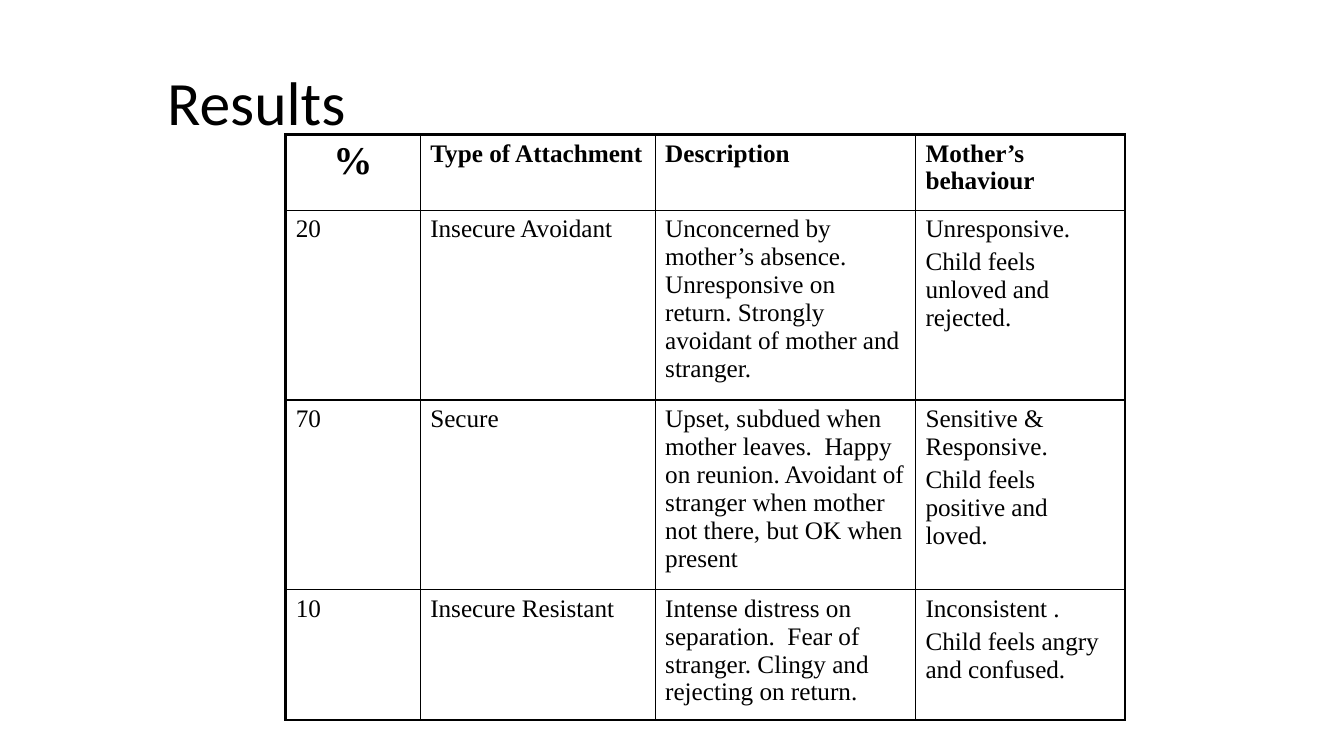
from dataclasses import dataclass

from lxml import etree
from pptx import Presentation
from pptx.dml.color import RGBColor
from pptx.enum.text import MSO_ANCHOR, MSO_AUTO_SIZE, PP_ALIGN
from pptx.oxml.ns import qn
from pptx.table import Table, _Cell
from pptx.text.text import TextFrame
from pptx.util import Cm, Pt

LEFT, CENTER = PP_ALIGN.LEFT, PP_ALIGN.CENTER
TOP, MIDDLE = MSO_ANCHOR.TOP, MSO_ANCHOR.MIDDLE
NO_AUTOFIT = MSO_AUTO_SIZE.NONE


@dataclass(frozen=True)
class Theme:
    ink: str = "000000"
    title_font: str = "Calibri"
    table_font: str = "Times New Roman"
    title_size: float = 44
    percent_size: float = 28
    body_size: float = 18
    outer_line: float = 2.25
    inner_line: float = 1


@dataclass(frozen=True)
class Finding:
    percent: str
    attachment: str
    description: str
    mother: str


THEME = Theme()
COLUMN_WIDTHS = (3.39, 5.92, 6.56, 5.28)
ROW_HEIGHTS = (1.91, 4.78, 4.78, 3.28)
FINDINGS = (
    Finding("%", "Type of Attachment", "Description", "Mother’s behaviour"),
    Finding("20", "Insecure Avoidant",
            "Unconcerned by mother’s absence. Unresponsive on return. "
            "Strongly avoidant of mother and stranger.",
            "Unresponsive.\nChild feels unloved and rejected."),
    Finding("70", "Secure",
            "Upset, subdued when mother leaves.  Happy on reunion. Avoidant of "
            "stranger when mother not there, but OK when present",
            "Sensitive & Responsive.\nChild feels positive and loved."),
    Finding("10", "Insecure Resistant",
            "Intense distress on separation.  Fear of stranger. "
            "Clingy and rejecting on return.",
            "Inconsistent .\nChild feels angry and confused."),
)


def write_text(frame: TextFrame, text: str, *, font: str, size: float,
               bold: bool = False, align: PP_ALIGN = LEFT,
               line_spacing: float | None = None,
               percent_before: int | None = None) -> None:
    """Fill a frame, one paragraph per line of text."""
    frame.text = text
    for paragraph in frame.paragraphs:
        paragraph.alignment = align
        paragraph.line_spacing = line_spacing
        if percent_before is not None:
            properties = paragraph._p.get_or_add_pPr()
            before = etree.SubElement(properties, qn("a:spcBef"))
            etree.SubElement(before, qn("a:spcPct"), val=str(percent_before * 1000))
        for run in paragraph.runs:
            run.font.name = font
            run.font.size = Pt(size)
            run.font.bold = bold
            run.font.color.rgb = RGBColor.from_string(THEME.ink)


def draw_borders(cell: _Cell, outer_sides: dict[str, bool]) -> None:
    """Draw four borders, heavier where the side is on the table's edge."""
    properties = cell._tc.get_or_add_tcPr()
    for position, (side, is_outer) in enumerate(outer_sides.items()):
        width = THEME.outer_line if is_outer else THEME.inner_line
        line = etree.Element(qn(f"a:ln{side}"), w=str(int(Pt(width))))
        fill = etree.SubElement(line, qn("a:solidFill"))
        etree.SubElement(fill, qn("a:srgbClr"), val=THEME.ink)
        properties.insert(position, line)


def fill_table(table: Table) -> None:
    table.first_row = table.horz_banding = False
    for column, width in zip(table.columns, COLUMN_WIDTHS):
        column.width = Cm(width)
    for row, height in zip(table.rows, ROW_HEIGHTS):
        row.height = Cm(height)

    last_row, last_column = len(ROW_HEIGHTS) - 1, len(COLUMN_WIDTHS) - 1
    for r, finding in enumerate(FINDINGS):
        entries = (finding.percent, finding.attachment,
                   finding.description, finding.mother)
        for c, entry in enumerate(entries):
            cell = table.cell(r, c)
            is_percent_sign = r == 0 and c == 0
            cell.fill.background()
            cell.vertical_anchor = TOP
            write_text(cell.text_frame, entry, font=THEME.table_font,
                       size=THEME.percent_size if is_percent_sign else THEME.body_size,
                       bold=r == 0, align=CENTER if is_percent_sign else LEFT,
                       percent_before=20)
            draw_borders(cell, {"L": c == 0, "R": c == last_column,
                                "T": r == 0, "B": r == last_row})


def main() -> None:
    presentation = Presentation()
    presentation.slide_width, presentation.slide_height = Cm(33.87), Cm(19.05)
    slide = presentation.slides.add_slide(presentation.slide_layouts[5])

    # Title
    title = slide.shapes.title
    title.left, title.top = Cm(3.96), Cm(1.07)
    title.width, title.height = Cm(28.22), Cm(3.18)
    title.text_frame.auto_size = NO_AUTOFIT
    title.text_frame.vertical_anchor = MIDDLE
    write_text(title.text_frame, "Results", font=THEME.title_font,
               size=THEME.title_size, line_spacing=0.9)

    # Attachment findings
    frame = slide.shapes.add_table(
        len(ROW_HEIGHTS), len(COLUMN_WIDTHS), Cm(7.2), Cm(3.39),
        Cm(sum(COLUMN_WIDTHS)), Cm(sum(ROW_HEIGHTS)))
    fill_table(frame.table)

    presentation.save("out.pptx")


if __name__ == "__main__":
    main()
